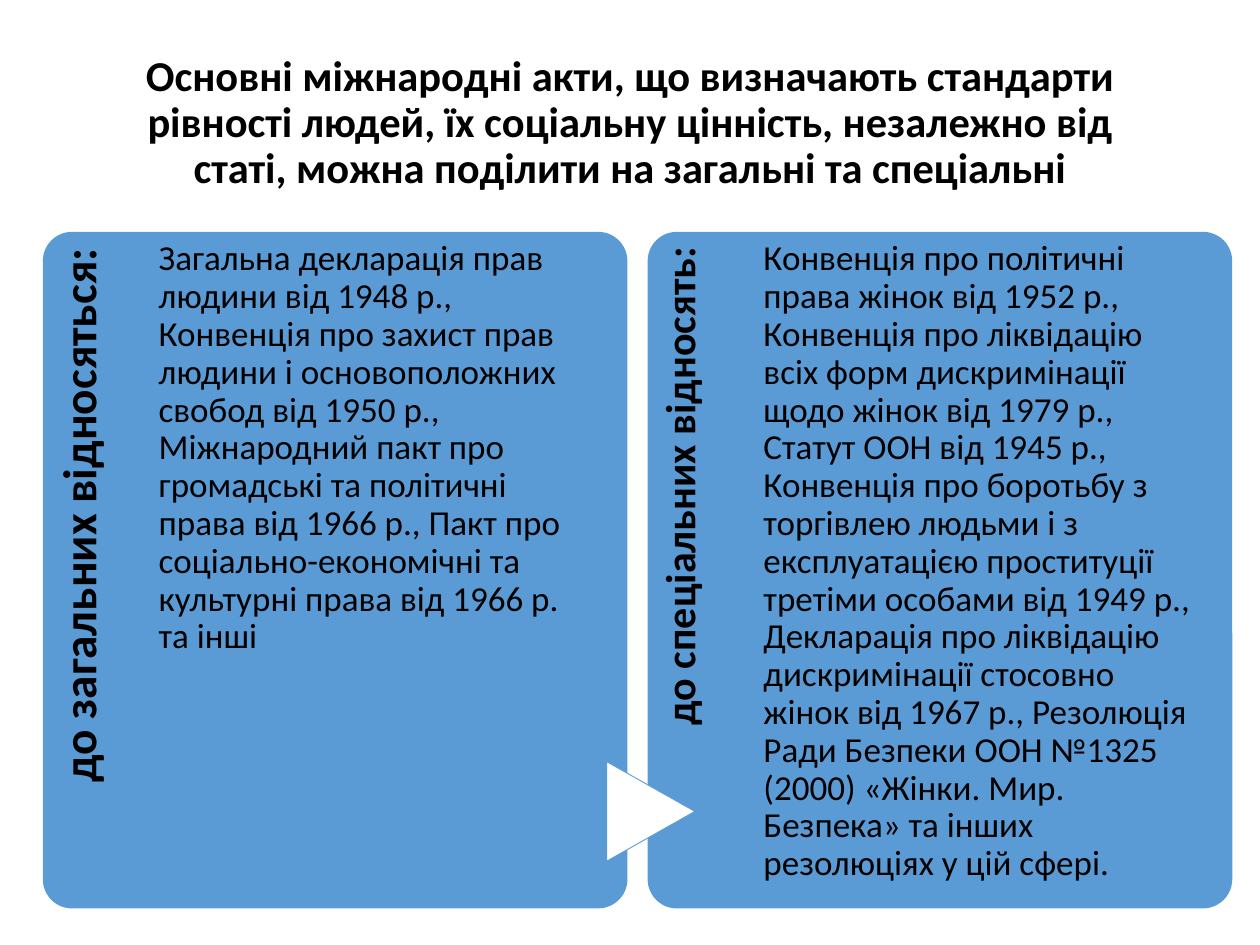
from lxml import etree
from pptx import Presentation
from pptx.dml.color import RGBColor
from pptx.enum.shapes import MSO_SHAPE
from pptx.enum.text import MSO_ANCHOR, MSO_AUTO_SIZE, PP_ALIGN
from pptx.oxml.ns import qn
from pptx.util import Inches, Pt

ROUND, TRI = MSO_SHAPE.ROUNDED_RECTANGLE, MSO_SHAPE.FLOWCHART_EXTRACT
TOP, MID = MSO_ANCHOR.TOP, MSO_ANCHOR.MIDDLE
LEFT, MIDDLE, RIGHT = PP_ALIGN.LEFT, PP_ALIGN.CENTER, PP_ALIGN.RIGHT
FIXED = MSO_AUTO_SIZE.NONE

BLUE = RGBColor(0x5B, 0x9B, 0xD5)
WHITE = RGBColor(0xFF, 0xFF, 0xFF)
BLACK = RGBColor(0, 0, 0)

# Grid of two columns, in inches
X0, Y0, STEP = 0.34, 1.84, 4.8
WIDE, HIGH = 4.64, 5.37
HEAD_W, HEAD_H = 0.93, 4.4
BODY_X, BODY_W = 0.92, 3.46

TITLE = ("Основні міжнародні акти, що визначають стандарти рівності людей, "
         "їх соціальну цінність, незалежно від статі, можна поділити "
         "на загальні та спеціальні")

# Heading, its size, its top and right insets, body
PANELS = [
    ("до загальних відносяться:", 27, 0.1, 0.13,
     "Загальна декларація прав людини від 1948 р., Конвенція про захист прав "
     "людини і основоположних свобод від 1950 р., Міжнародний пакт про "
     "громадські та політичні права від 1966 р., Пакт про "
     "соціально-економічні та культурні права від 1966 р. та інші"),
    ("до спеціальних відносять:", 24, 0.09, 0.12,
     "Конвенція про політичні права жінок від 1952 р., Конвенція про "
     "ліквідацію всіх форм дискримінації щодо жінок від 1979 р., Статут ООН "
     "від 1945 р., Конвенція про боротьбу з торгівлею людьми і з "
     "експлуатацією проституції третіми особами від 1949 р., Декларація про "
     "ліквідацію дискримінації стосовно жінок від 1967 р., Резолюція Ради "
     "Безпеки ООН №1325 (2000) «Жінки. Мир. Безпека» та інших резолюціях "
     "у цій сфері."),
]


def apply(item, form):
    for name, value in form.items():
        setattr(item, name, value)


def place(item, box):
    names = ("left", "top", "width", "height")
    apply(item, {n: Inches(v) for n, v in zip(names, box)})


def write(item, text, size, bold=False, align=LEFT, anchor=TOP, pads=None):
    frame = item.text_frame
    apply(frame, {"word_wrap": True, "auto_size": FIXED,
                  "vertical_anchor": anchor})
    if pads:
        names = ("margin_left", "margin_top", "margin_right", "margin_bottom")
        apply(frame, {n: Inches(v) for n, v in zip(names, pads)})
    para = frame.paragraphs[0]
    apply(para, {"alignment": align, "line_spacing": 0.9})
    run = para.add_run()
    run.text = text
    apply(run.font, {"name": "Calibri", "size": Pt(size), "bold": bold})
    run.font.color.rgb = BLACK


def add_form(slide, kind, box, fill):
    form = slide.shapes.add_shape(kind, *map(Inches, box))
    form.shadow.inherit = False
    form.fill.solid()
    form.fill.fore_color.rgb = fill
    form.line.fill.background()
    return form


def add_text(slide, box, text, size, turn=0, **form):
    item = slide.shapes.add_textbox(*map(Inches, box))
    item.rotation = turn
    write(item, text, size, **form)


def add_panel(slide, x):
    panel = add_form(slide, ROUND, (x, Y0, WIDE, HIGH), BLUE)
    panel.adjustments[0] = 0.05


def add_words(slide, x, head, size, top, right, body):
    # The heading is turned about the centre of its upright strip
    mid_x, mid_y = x + HEAD_W / 2, Y0 + HEAD_H / 2
    box = (mid_x - HEAD_H / 2, mid_y - HEAD_W / 2, HEAD_H, HEAD_W)
    add_text(slide, box, head, size, turn=270, bold=True, align=RIGHT,
             pads=(0, top, right, 0))
    add_text(slide, (x + BODY_X, Y0, BODY_W, HIGH), body, 20,
             pads=(0, 0.07, 0, 0))


def add_arrow(slide):
    arrow = add_form(slide, TRI, (4.77, 6.09, 0.79, 0.7), WHITE)
    arrow.rotation = 90
    arrow.line.color.rgb = BLUE
    arrow.line.width = Pt(0.5)


def main():
    deck = Presentation()
    apply(deck, {"slide_width": Inches(10), "slide_height": Inches(7.5)})
    slide = deck.slides.add_slide(deck.slide_layouts[5])

    # Title
    title = slide.shapes.title
    place(title, (0.69, 0.4, 8.62, 1.16))
    write(title, TITLE, 24.3, bold=True, align=MIDDLE, anchor=MID)

    # Panels, then the arrow between them, then the words
    spots = [X0 + i * STEP for i in range(len(PANELS))]
    for x in spots:
        add_panel(slide, x)
    add_arrow(slide)
    for x, words in zip(spots, PANELS):
        add_words(slide, x, *words)

    deck.save("out.pptx")


if __name__ == "__main__":
    main()
